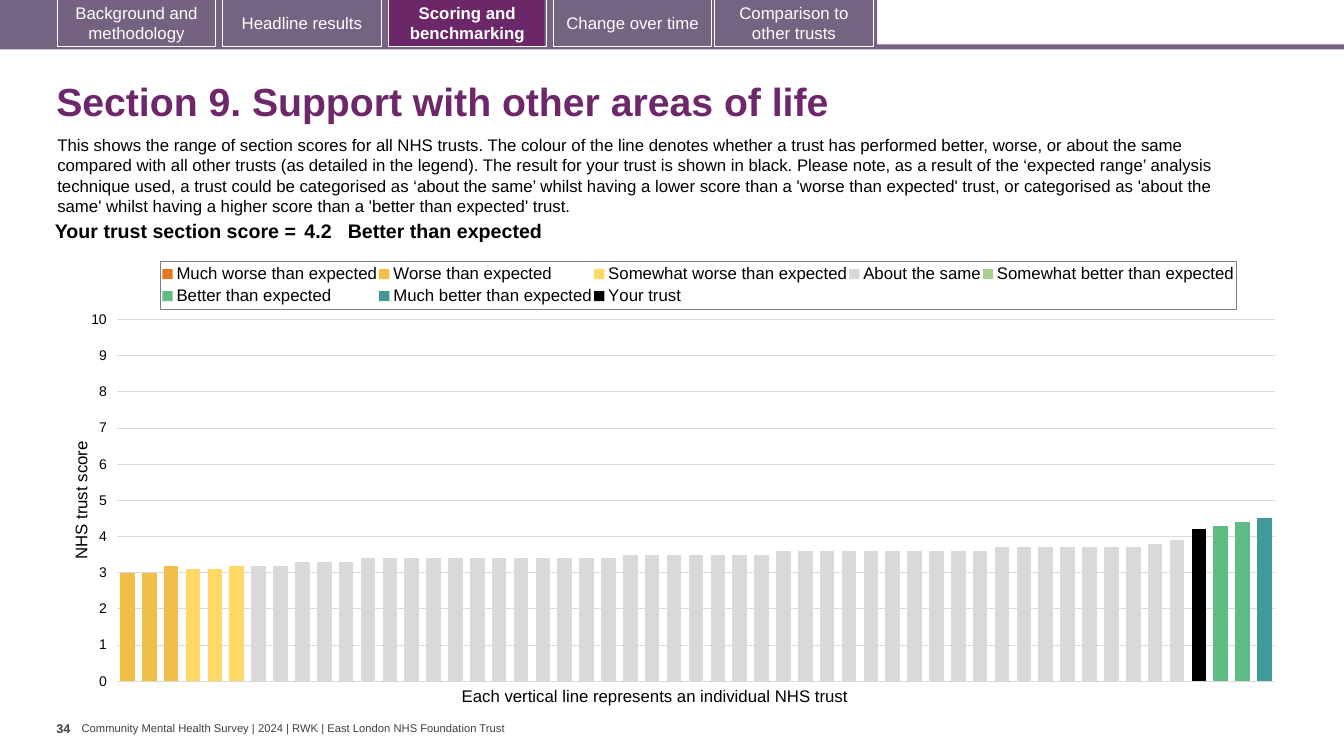
from copy import deepcopy
from dataclasses import dataclass
from typing import Optional

from pptx import Presentation
from pptx.chart.data import CategoryChartData
from pptx.dml.color import RGBColor
from pptx.enum.chart import XL_CHART_TYPE as Chart, XL_LEGEND_POSITION as LegendPos
from pptx.enum.chart import XL_TICK_LABEL_POSITION as LabelPos, XL_TICK_MARK as Tick
from pptx.enum.shapes import MSO_SHAPE as Shape
from pptx.enum.text import MSO_ANCHOR as Anchor, PP_ALIGN as Align
from pptx.oxml import parse_xml
from pptx.oxml.ns import nsdecls, qn
from pptx.util import Inches, Pt

BLACK = RGBColor(0x00, 0x00, 0x00)
WHITE = RGBColor(0xFF, 0xFF, 0xFF)
GREY = RGBColor(0x40, 0x40, 0x40)
GRID = RGBColor(0xD9, 0xD9, 0xD9)
BAND = RGBColor(0x75, 0x63, 0x82)
TAB = RGBColor(0x74, 0x62, 0x80)
ACTIVE = RGBColor(0x6B, 0x27, 0x68)
TITLE = RGBColor(0x6D, 0x27, 0x6A)
TRUSTS = 53


@dataclass
class NavTab:
    text: str
    left: float
    fill: Optional[RGBColor] = None
    bold: bool = False


@dataclass
class Label:
    text: str
    box: tuple
    size: float
    color: RGBColor = BLACK
    bold: bool = False
    wrap: bool = False
    insets: tuple = (0.1, 0.05)
    anchor: Anchor = Anchor.TOP
    spacing: float = 1.0


@dataclass
class Band:
    name: str
    color: RGBColor
    first: int = 0
    scores: tuple = ()

    def values(self) -> list:
        after = TRUSTS - self.first - len(self.scores)
        return [None] * self.first + list(self.scores) + [None] * after


TABS = [
    NavTab("Background and methodology", 0.57, TAB),
    NavTab("Headline results", 2.21),
    NavTab("Scoring and benchmarking", 3.85, bold=True),
    NavTab("Change over time", 5.49, BAND),
    NavTab("Comparison to other trusts", 7.09, BAND),
]
LABELS = [
    Label("Community Mental Health Survey | 2024 | RWK | East London NHS Foundation Trust",
          (0.81, 7.16, 4.26, 0.13), 8, GREY, insets=(0, 0), anchor=Anchor.MIDDLE),
    Label("34", (0.56, 7.1, 0.25, 0.4), 9, GREY, bold=True, insets=(0, 0.05)),
    Label("Section 9. Support with other areas of life", (0.46, 0.67, 12.49, 0.72), 28,
          TITLE, bold=True, wrap=True, anchor=Anchor.MIDDLE, spacing=0.9),
    Label("This shows the range of section scores for all NHS trusts. The colour of the line "
          "denotes whether a trust has performed better, worse, or about the same compared with "
          "all other trusts (as detailed in the legend). The result for your trust is shown in "
          "black. Please note, as a result of the ‘expected range’ analysis technique used, a "
          "trust could be categorised as ‘about the same’ whilst having a lower score than a "
          "'worse than expected' trust, or categorised as 'about the same' whilst having a "
          "higher score than a 'better than expected' trust.",
          (0.47, 1.29, 12.13, 0.91), 12, wrap=True),
    Label("Each vertical line represents an individual NHS trust", (4.48, 6.75, 4.11, 0.3), 12),
]
SAME = ((3.2, 2), (3.3, 3), (3.4, 12), (3.5, 7), (3.6, 10), (3.7, 7), (3.8, 1), (3.9, 1))
BANDS = [
    Band("Much worse than expected", RGBColor(0xE8, 0x77, 0x22)),
    Band("Worse than expected", RGBColor(0xF1, 0xBE, 0x48), 0, (3.0, 3.0, 3.2)),
    Band("Somewhat worse than expected", RGBColor(0xFF, 0xD9, 0x66), 3, (3.1, 3.1, 3.2)),
    Band("About the same", GRID, 6, tuple(score for score, n in SAME for _ in range(n))),
    Band("Somewhat better than expected", RGBColor(0xA9, 0xD1, 0x8E)),
    Band("Better than expected", RGBColor(0x5F, 0xBD, 0x83), 49, (4.2, 4.3, 4.4)),
    Band("Much better than expected", RGBColor(0x41, 0x99, 0x99), 52, (4.5,)),
    Band("Your trust", BLACK, 49, (4.2,)),
]


def set_font(font, size: float, color: RGBColor = BLACK, bold: bool = False) -> None:
    font.name, font.size, font.bold = "Arial", Pt(size), bold
    font.color.rgb = color


def add_run(p, text: str, size: float, color: RGBColor = BLACK, bold: bool = False) -> None:
    r = p.add_run()
    r.text = text
    set_font(r.font, size, color, bold)


def add_rect(s, box: tuple, fill: Optional[RGBColor], line: Optional[RGBColor] = None):
    sp = s.shapes.add_shape(Shape.RECTANGLE, *map(Inches, box))
    sp.shadow.inherit = False
    if fill is None:
        sp.fill.background()
    else:
        sp.fill.solid()
        sp.fill.fore_color.rgb = fill
    if line is None:
        sp.line.fill.background()
    else:
        sp.line.color.rgb = line
        sp.line.width = Pt(0.75)
    return sp


def add_tab(s, tab: NavTab) -> None:
    tf = add_rect(s, (tab.left, -0.01, 1.57, 0.47), tab.fill, WHITE).text_frame
    tf.word_wrap, tf.vertical_anchor = True, Anchor.MIDDLE
    tf.paragraphs[0].alignment = Align.CENTER
    add_run(tf.paragraphs[0], tab.text, 12, WHITE, tab.bold)


def add_label(s, label: Label) -> None:
    tf = s.shapes.add_textbox(*map(Inches, label.box)).text_frame
    tf.word_wrap, tf.vertical_anchor = label.wrap, label.anchor
    tf.margin_left = tf.margin_right = Inches(label.insets[0])
    tf.margin_top = tf.margin_bottom = Inches(label.insets[1])
    tf.paragraphs[0].line_spacing = label.spacing
    add_run(tf.paragraphs[0], label.text, label.size, label.color, label.bold)


def add_score_table(s) -> None:
    cells = [("Your trust section score =", 2.63, 0.04), ("4.2", 0.47, 0.04),
             ("Better than expected", 8.59, 0)]
    box = map(Inches, (0.35, 2.15, 11.7, 0.31))
    table = s.shapes.add_table(1, len(cells), *box).table
    table.first_row = table.horz_banding = False
    for i, (text, width, inset) in enumerate(cells):
        table.columns[i].width = Inches(width)
        cell = table.cell(0, i)
        cell.fill.background()
        cell.margin_left = cell.margin_right = Inches(inset)
        cell.margin_top = cell.margin_bottom = Inches(0.04)
        add_run(cell.text_frame.paragraphs[0], text, 14, bold=True)
    table.cell(0, 0).text_frame.paragraphs[0].alignment = Align.RIGHT


def manual_layout(x: float, y: float, w: float, h: float, inner: bool = False):
    target = '<c:layoutTarget val="inner"/>' if inner else ""
    return parse_xml(
        f'<c:layout {nsdecls("c")}><c:manualLayout>{target}<c:xMode val="edge"/>'
        f'<c:yMode val="edge"/><c:x val="{x}"/><c:y val="{y}"/><c:w val="{w}"/>'
        f'<c:h val="{h}"/></c:manualLayout></c:layout>')


def move_last_series_to_right_axis(chart) -> None:
    area = chart.plots[0]._element.getparent()
    bars, cat, val = (area.find(qn(f"c:{tag}")) for tag in ("barChart", "catAx", "valAx"))
    bars2, cat2, val2 = map(deepcopy, (bars, cat, val))
    bars.remove(bars.findall(qn("c:ser"))[-1])
    for ser in bars2.findall(qn("c:ser"))[:-1]:
        bars2.remove(ser)
    ids = ("50001", "50002")
    for el, new in zip(bars2.findall(qn("c:axId")), ids):
        el.set("val", new)
    for axis, own, cross in ((cat2, *ids), (val2, *reversed(ids))):
        axis.find(qn("c:axId")).set("val", own)
        axis.find(qn("c:crossAx")).set("val", cross)
    val2.find(qn("c:crosses")).set("val", "max")
    val2.find(qn("c:axPos")).set("val", "r")
    bars.addnext(bars2)
    val.addnext(val2)
    val2.addnext(cat2)


def add_score_chart(s) -> None:
    data = CategoryChartData()
    data.categories = [str(n + 1) for n in range(TRUSTS)]
    for band in BANDS:
        data.add_series(band.name, band.values())
    box = map(Inches, (0.67, 2.47, 12.15, 4.44))
    chart = s.shapes.add_chart(Chart.COLUMN_CLUSTERED, *box, data).chart
    chart.has_title = False
    set_font(chart.font, 10)
    plot = chart.plots[0]
    plot.gap_width, plot.overlap, plot.vary_by_categories = 50, 100, False
    for series, band in zip(plot.series, BANDS):
        series.format.fill.solid()
        series.format.fill.fore_color.rgb = band.color

    # Axes: the right one shares the scale but shows no labels
    chart.category_axis.visible = False
    axis = chart.value_axis
    axis.minimum_scale, axis.maximum_scale, axis.major_unit = 0, 10, 1
    axis.major_tick_mark = axis.minor_tick_mark = Tick.NONE
    axis.format.line.fill.background()
    axis.has_major_gridlines = False
    axis.tick_label_position = LabelPos.NONE
    move_last_series_to_right_axis(chart)
    axis.tick_label_position = LabelPos.LOW
    set_font(axis.tick_labels.font, 10)
    grid = axis.major_gridlines.format.line
    grid.color.rgb, grid.width = GRID, Pt(0.75)
    tf = axis.axis_title.text_frame
    tf._txBody.bodyPr.set("rot", "-5400000")
    add_run(tf.paragraphs[0], "NHS trust score", 12)

    # Plot area and bordered legend
    area = plot._element.getparent()
    for old in area.findall(qn("c:layout")):
        area.remove(old)
    area.insert(0, manual_layout(0.04, 0.158, 0.946, 0.808, inner=True))
    chart.has_legend = True
    legend = chart.legend
    legend.position, legend.include_in_layout = LegendPos.TOP, False
    set_font(legend.font, 12)
    for old in legend._element.findall(qn("c:layout")):
        legend._element.remove(old)
    overlay = legend._element.find(qn("c:overlay"))
    overlay.addprevious(manual_layout(0.076, 0.027, 0.878, 0.108))
    overlay.addnext(parse_xml(
        f'<c:spPr {nsdecls("c", "a")}><a:ln w="9525"><a:solidFill>'
        '<a:srgbClr val="7F7F7F"/></a:solidFill></a:ln></c:spPr>'))


def main() -> None:
    prs = Presentation()
    prs.slide_width, prs.slide_height = Inches(13.33), Inches(7.5)
    s = prs.slides.add_slide(prs.slide_layouts[6])
    # Navigation bar
    add_rect(s, (0, 0.44, 13.33, 0.05), BAND)
    add_rect(s, (0, 0, 8.7, 0.47), BAND)
    add_rect(s, (0.59, 0, 1.54, 0.46), TAB)
    add_rect(s, (3.86, 0, 1.54, 0.46), ACTIVE)
    for tab in TABS:
        add_tab(s, tab)
    # Text, chart and score
    for label in LABELS:
        add_label(s, label)
    add_score_chart(s)
    add_score_table(s)
    prs.save("out.pptx")


if __name__ == "__main__":
    main()
